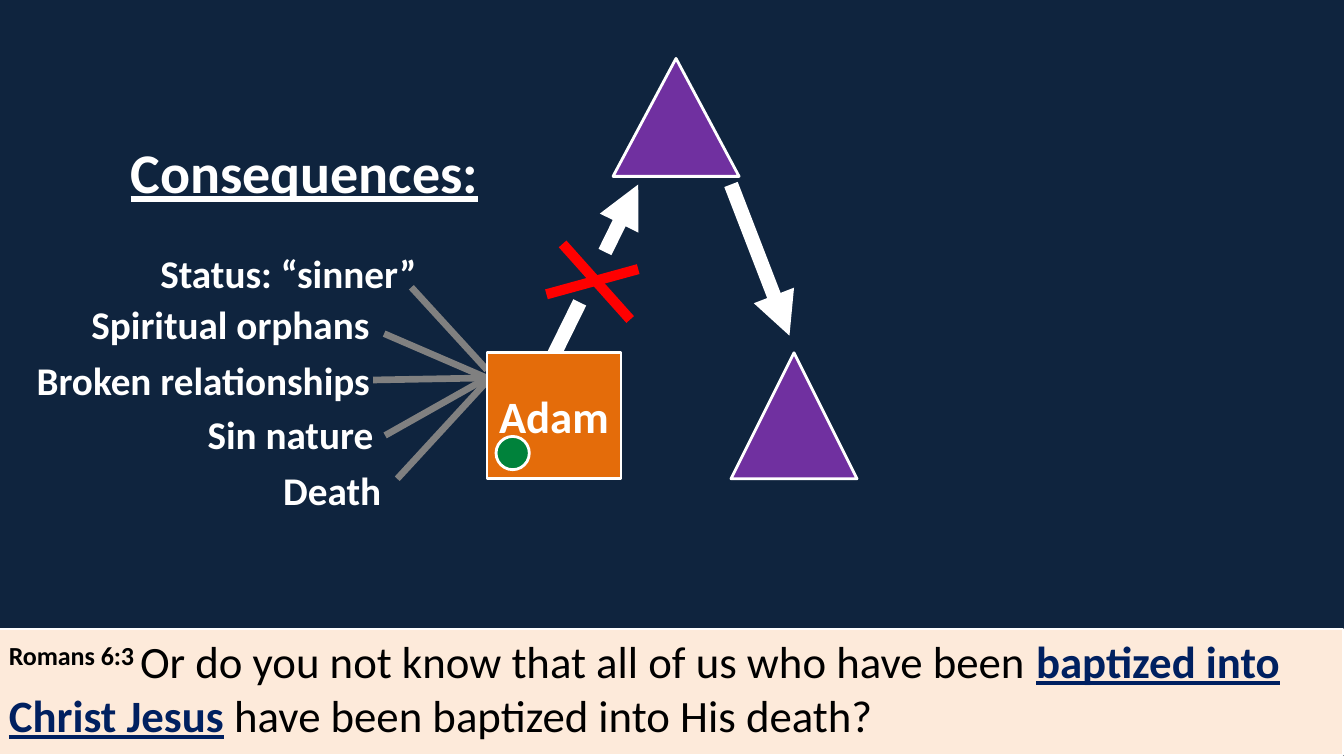
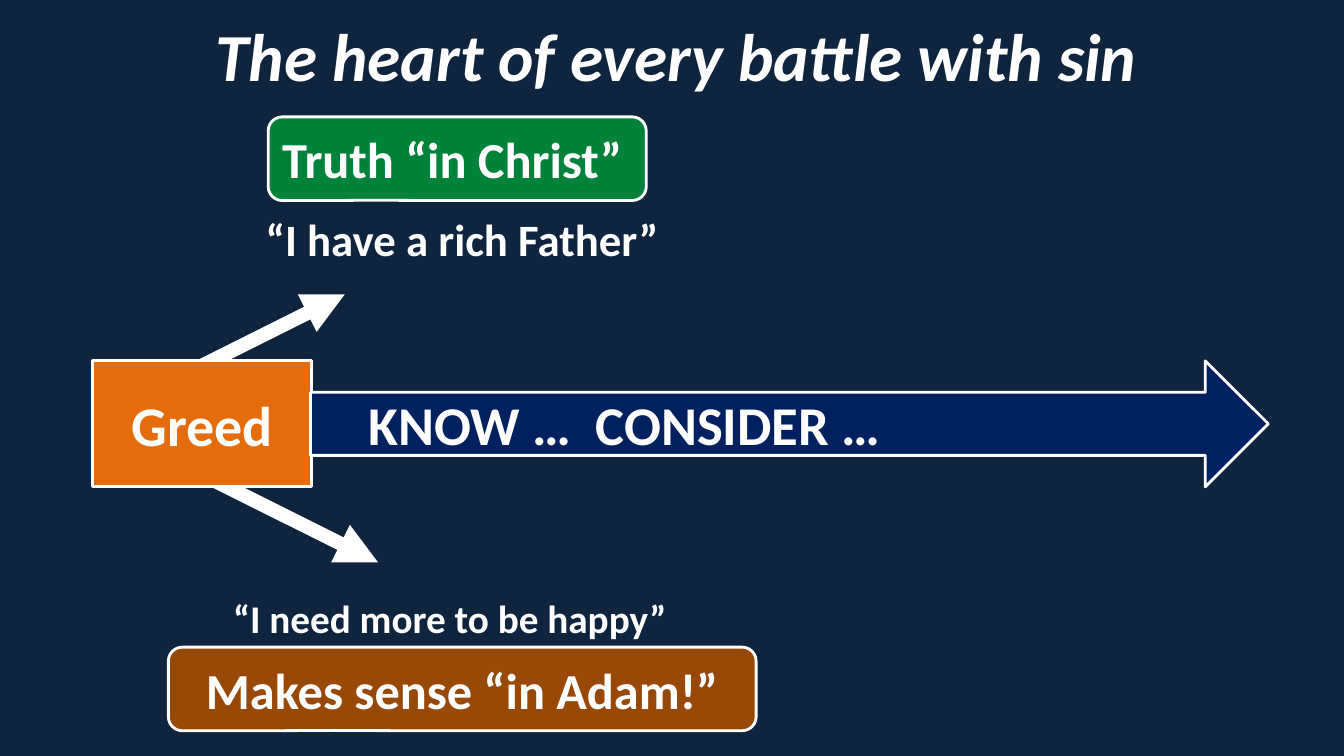
from lxml import etree
from pptx import Presentation
from pptx import util as u
from pptx.dml.color import RGBColor
from pptx.enum import shapes, text
from pptx.oxml import ns

COLORS = {
    "navy": "0F243E", "white": "FFFFFF", "black": "000000", "gray": "808080",
    "orange": "E46C0A", "brown": "984807", "purple": "7030A0",
    "green": "00823B", "red": "FF0000", "blue": "002060", "cream": "FDEADA",
}
SHAPE = shapes.MSO_SHAPE
LEFT, CENTER = text.PP_ALIGN.LEFT, text.PP_ALIGN.CENTER
MIDDLE, TOP = text.MSO_ANCHOR.MIDDLE, text.MSO_ANCHOR.TOP
CALLOUT_TIP = (-0.219, 0.496, 0.167)


def rgb(name):
    return RGBColor.from_string(COLORS[name])


class Deck:
    """Holds the shared style and the slide being built."""

    font = {"name": "Calibri", "bold": True}

    def __init__(self):
        self.prs = Presentation()
        self.prs.slide_width = u.Inches(13.33)
        self.prs.slide_height = u.Inches(7.5)
        self.s = None

    def slide(self):
        self.s = self.prs.slides.add_slide(self.prs.slide_layouts[6])
        self.s.background.fill.solid()
        self.s.background.fill.fore_color.rgb = rgb("navy")

    def shape(self, kind, box, fill=None, width=2):
        sp = self.s.shapes.add_shape(kind, *map(u.Inches, box))
        sp.shadow.inherit = False
        if fill:
            sp.fill.solid()
            sp.fill.fore_color.rgb = rgb(fill)
            sp.line.color.rgb = rgb("white")
            sp.line.width = u.Pt(width)
        else:
            sp.fill.background()
            sp.line.fill.background()
        return sp

    def paragraph(self, sp, runs, size, align=CENTER, anchor=MIDDLE):
        """Fill a shape with one paragraph of (text, color, format) runs."""
        tf = sp.text_frame
        tf.word_wrap = True
        tf.vertical_anchor = anchor
        p = tf.paragraphs[0]
        p.alignment = align
        for words, color, extra in runs:
            r = p.add_run()
            r.text = words
            for key, value in {**self.font, "size": u.Pt(size), **extra}.items():
                setattr(r.font, key, value)
            r.font.color.rgb = rgb(color)
        return p

    def box(self, kind, box, words, size, fill=None, align=CENTER, **extra):
        sp = self.shape(kind, box, fill)
        return sp, self.paragraph(sp, [(words, "white", extra)], size, align)

    def callout(self, box, words, size, fill=None, align=CENTER, **extra):
        sp, _ = self.box(SHAPE.ROUNDED_RECTANGULAR_CALLOUT, box, words, size,
                         fill, align, **extra)
        for i, value in enumerate(CALLOUT_TIP):
            sp.adjustments[i] = value

    def line(self, start, end, color="white", width=10.25, arrow=False):
        ends = map(u.Inches, (*start, *end))
        cx = self.s.shapes.add_connector(shapes.MSO_CONNECTOR.STRAIGHT, *ends)
        cx.line.color.rgb = rgb(color)
        cx.line.width = u.Pt(width)
        props = cx._element.spPr
        if arrow:
            etree.SubElement(props.find(ns.qn("a:ln")), ns.qn("a:tailEnd"),
                             type="triangle")
        etree.SubElement(props, ns.qn("a:effectLst"))

    def verse(self, reference, runs):
        """Scripture band across the foot of the slide."""
        sp = self.shape(SHAPE.RECTANGLE, (-0.01, 6.24, 13.33, 1.25), "cream", 1.5)
        p = self.paragraph(sp, [(reference, "black", {}), *runs], 32, LEFT, TOP)
        p.runs[0]._r.get_or_add_rPr().set("baseline", "30000")


def consequences(d):
    d.slide()

    # Rays from Adam to each consequence
    for start, end in [((4.83, 3.67), (4.08, 2.85)),
                       ((4.83, 3.75), (3.81, 3.31)),
                       ((4.79, 3.75), (3.7, 3.77)),
                       ((4.83, 3.75), (3.82, 4.32)),
                       ((4.86, 3.75), (3.94, 4.75))]:
        d.line(start, end, "gray", 4.75)

    # Adam and the broken path upward
    d.line((5.42, 3.67), (5.75, 3))
    d.line((6, 2.5), (6.33, 1.83), arrow=True)
    d.box(SHAPE.RECTANGLE, (4.83, 3.5, 1.33, 1.25), "Adam", 32, "orange")
    d.line((5.58, 2.42), (6.25, 3.17), "red", 7.25)
    d.line((6.33, 2.67), (5.42, 2.92), "red", 7.25)

    # Triangles and the path downward
    d.shape(SHAPE.ISOSCELES_TRIANGLE, (6.08, 0.58, 1.25, 1.17), "purple")
    d.shape(SHAPE.ISOSCELES_TRIANGLE, (7.25, 3.5, 1.25, 1.25), "purple")
    d.line((7.25, 1.83), (7.83, 3.33), arrow=True)
    d.shape(SHAPE.OVAL, (4.92, 4.33, 0.33, 0.33), "green")

    # Verse
    plain = {"bold": False}
    d.verse("Romans 6:3 ", [
        ("Or do you not know that all of us who have been ", "black", plain),
        ("baptized into Christ Jesus", "blue", {"underline": True}),
        (" have been baptized into His death?", "black", plain),
    ])

    # Heading and list of consequences
    for words, box in [("Status: “sinner”", (1.17, 2.42, 3.38, 0.58)),
                       ("Spiritual orphans", (0.41, 2.92, 3.75, 0.58)),
                       ("Broken relationships", (0.02, 3.48, 3.99, 0.58)),
                       ("Sin nature", (0.92, 3.99, 3.92, 0.63)),
                       ("Death", (1.88, 4.57, 2.83, 0.58))]:
        d.callout(box, words, 28)
    d.callout((1, 1.32, 4.04, 0.75), "Consequences:", 40, underline=True)


def battle(d):
    d.slide()
    d.callout((0.17, 0.08, 13.08, 0.92), "The heart of every battle with sin",
              48, italic=True)

    # Two ways out of the temptation
    d.line((1.75, 4.58), (3.75, 5.58), width=10, arrow=True)
    d.line((1.92, 3.67), (3.42, 2.92), width=10, arrow=True)
    d.box(SHAPE.RECTANGLE, (0.92, 3.58, 2.17, 1.25), "Greed", 40, "orange")

    # Arrow with the two steps, set apart by a tab stop
    sp, p = d.box(SHAPE.RIGHT_ARROW, (3.08, 3.58, 9.5, 1.25),
                  "KNOW …\tCONSIDER …", 39, "blue", LEFT)
    sp.text_frame.margin_left = u.Inches(0.58)
    tabs = etree.SubElement(p._p.get_or_add_pPr(), ns.qn("a:tabLst"))
    etree.SubElement(tabs, ns.qn("a:tab"), pos=str(u.Inches(2.25)), algn="l")

    # Truth above, lie below
    d.callout((2.42, 1.91, 4.33, 0.92), "“I have a rich Father”", 32)
    d.callout((2.66, 1.16, 3.75, 0.83), "Truth “in Christ”", 36, "green", LEFT)
    d.callout((1.67, 6.42, 5.83, 0.83), "Makes sense “in Adam!”", 36, "brown")
    d.callout((1.92, 5.67, 5.08, 0.92), "“I need more to be happy”", 28)


def main():
    d = Deck()
    consequences(d)
    battle(d)
    d.prs.save("out.pptx")


if __name__ == "__main__":
    main()
